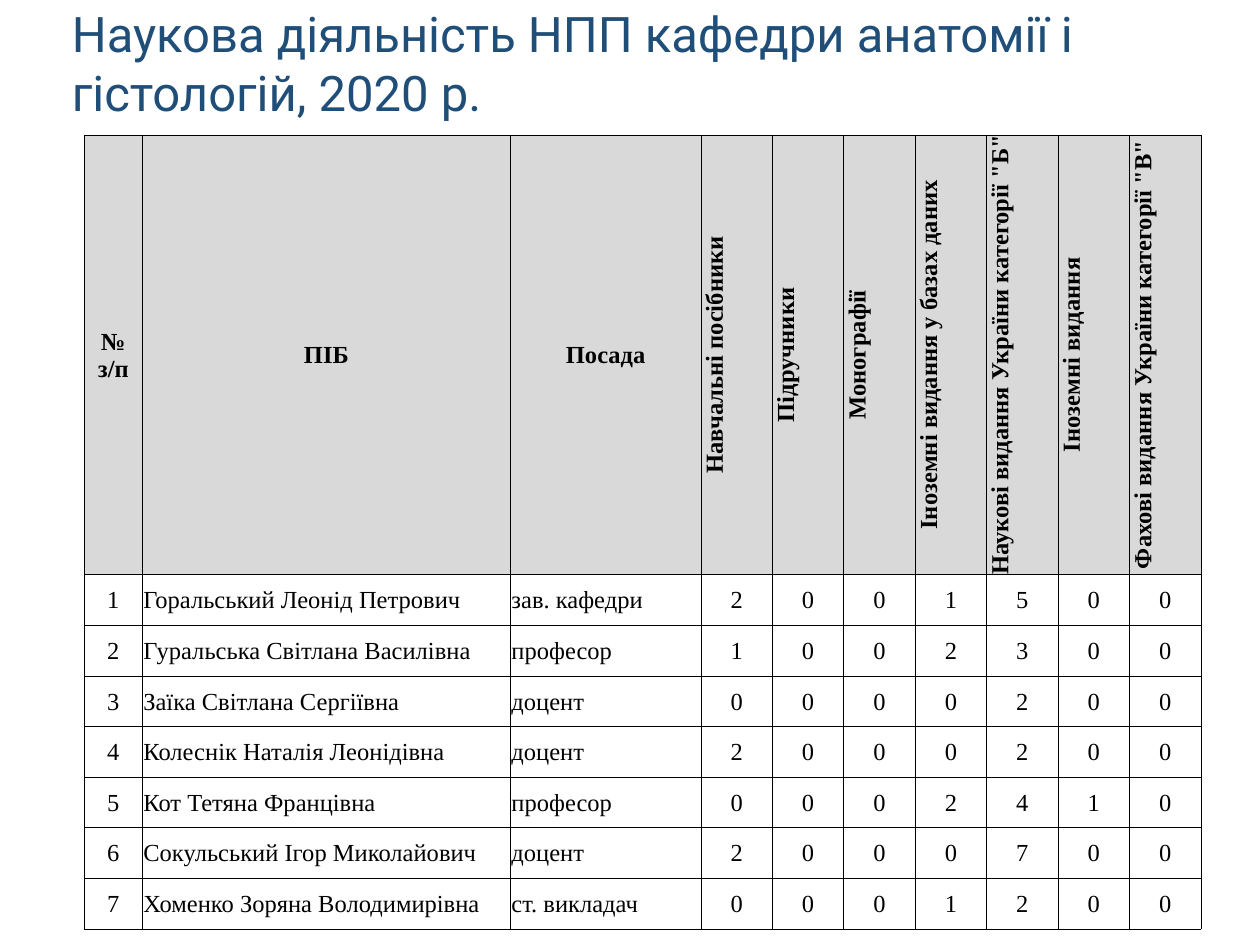
from lxml import etree
from pptx import Presentation
from pptx.dml.color import RGBColor
from pptx.enum import text
from pptx.oxml.ns import qn
from pptx.util import Cm, Pt

NAVY = RGBColor(0x1F, 0x4E, 0x79)
BLACK = RGBColor(0, 0, 0)
GRAY = RGBColor(0xD9, 0xD9, 0xD9)
WHITE = RGBColor(0xFF, 0xFF, 0xFF)

HEADERS = [
    "№\nз/п", "ПІБ", "Посада", "Навчальні посібники", "Підручники", "Монографії",
    "Іноземні видання у базах даних", 'Наукові видання України категорії "Б"',
    "Іноземні видання", 'Фахові видання України категорії "В"',
]
STAFF = [
    ("Горальський Леонід Петрович", "зав. кафедри", (2, 0, 0, 1, 5, 0, 0)),
    ("Гуральська Світлана Василівна", "професор", (1, 0, 0, 2, 3, 0, 0)),
    ("Заїка Світлана Сергіївна", "доцент", (0, 0, 0, 0, 2, 0, 0)),
    ("Колеснік Наталія Леонідівна", "доцент", (2, 0, 0, 0, 2, 0, 0)),
    ("Кот Тетяна Францівна", "професор", (0, 0, 0, 2, 4, 1, 0)),
    ("Сокульський Ігор Миколайович", "доцент", (2, 0, 0, 0, 7, 0, 0)),
    ("Хоменко Зоряна Володимирівна", "ст. викладач", (0, 0, 0, 1, 2, 0, 0)),
]
FIRST_COUNT_COLUMN = 3
COLUMN_WIDTHS = [1.17, 7.42, 3.84] + [1.44] * 7
ROW_HEIGHTS = [7.34] + [1.02] * len(STAFF)


def add_borders(cell):
    """Draw a thin black line on all four sides of a cell, ahead of its fill."""
    properties = cell._tc.get_or_add_tcPr()
    for position, side in enumerate(("a:lnL", "a:lnR", "a:lnT", "a:lnB")):
        line = etree.Element(qn(side), w=str(Pt(0.5)))
        fill = etree.SubElement(line, qn("a:solidFill"))
        etree.SubElement(fill, qn("a:srgbClr"), val=str(BLACK))
        properties.insert(position, line)


presentation = Presentation()
presentation.slide_width = Cm(25.4)
presentation.slide_height = Cm(19.05)
slide = presentation.slides.add_slide(presentation.slide_layouts[6])

title = slide.shapes.add_textbox(Cm(1.2), Cm(0), Cm(23), Cm(2.52))
title_frame = title.text_frame
title_frame.word_wrap = True
title_frame.vertical_anchor = text.MSO_ANCHOR.MIDDLE
title_frame.text = "Наукова діяльність НПП кафедри анатомії і гістологій, 2020 р."
title_font = title_frame.paragraphs[0].runs[0].font
title_font.name = "Roboto"
title_font.size = Pt(28)
title_font.color.rgb = NAVY

rows = [HEADERS]
for number, (name, position, counts) in enumerate(STAFF, start=1):
    rows.append([number, name, position, *counts])

table = slide.shapes.add_table(
    len(rows), len(HEADERS), Cm(1.7), Cm(2.72),
    Cm(sum(COLUMN_WIDTHS)), Cm(sum(ROW_HEIGHTS)),
).table
for column, width in zip(table.columns, COLUMN_WIDTHS):
    column.width = Cm(width)
for row, height in zip(table.rows, ROW_HEIGHTS):
    row.height = Cm(height)

for row_index, values in enumerate(rows):
    is_header = row_index == 0
    for column_index, value in enumerate(values):
        cell = table.cell(row_index, column_index)
        cell.text = str(value)
        cell.vertical_anchor = text.MSO_ANCHOR.MIDDLE
        inset = Cm(0) if is_header and column_index > 0 else Cm(0.02)
        cell.margin_left = cell.margin_right = cell.margin_top = inset
        cell.margin_bottom = Cm(0)
        cell.fill.solid()
        cell.fill.fore_color.rgb = GRAY if is_header else WHITE
        add_borders(cell)
        if is_header and column_index >= FIRST_COUNT_COLUMN:
            cell._tc.get_or_add_tcPr().set("vert", "vert270")

        is_left_aligned = not is_header and column_index in (1, 2)
        for paragraph in cell.text_frame.paragraphs:
            paragraph.alignment = (
                text.PP_ALIGN.LEFT if is_left_aligned else text.PP_ALIGN.CENTER
            )
            for run in paragraph.runs:
                run.font.name = "Times New Roman"
                run.font.size = Pt(14)
                run.font.bold = is_header
                run.font.color.rgb = BLACK

presentation.save("out.pptx")
